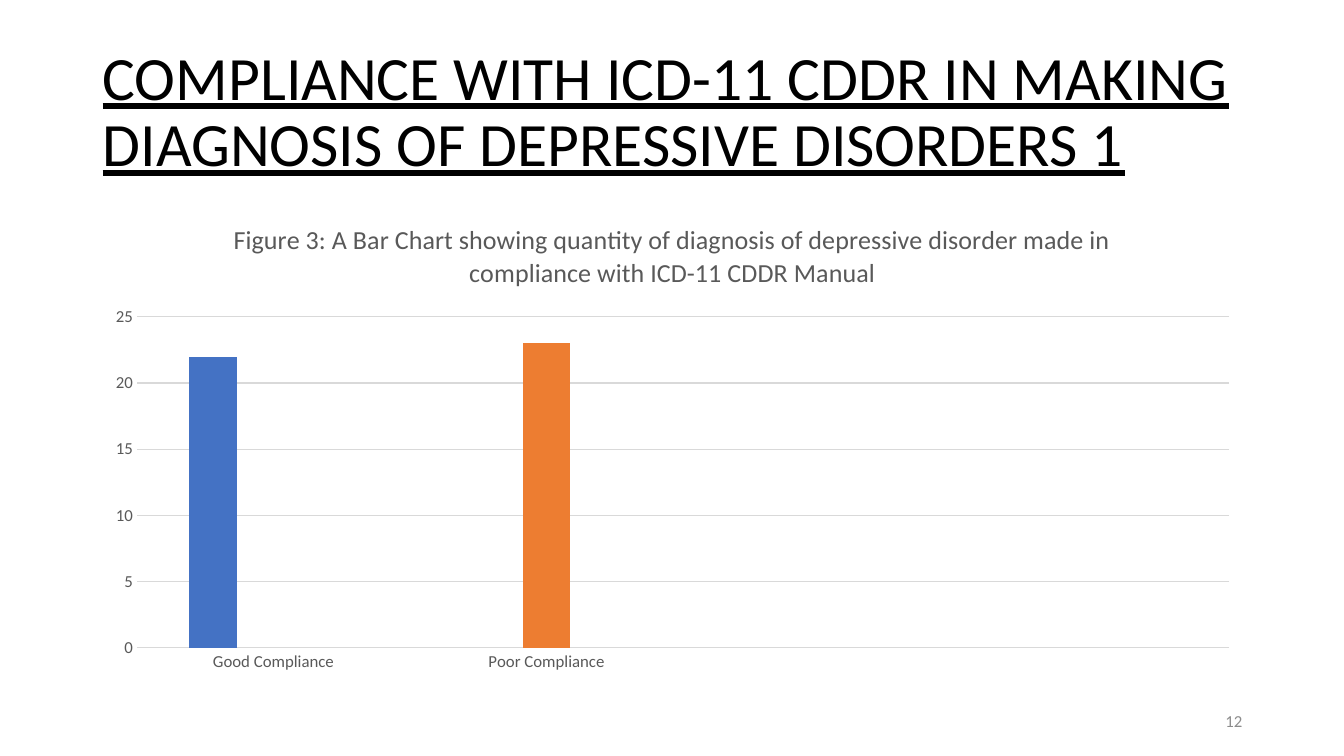
import pptx
import pptx.chart.data
import pptx.dml.color
import pptx.enum.chart
import pptx.enum.text
import pptx.util
from pptx.util import Inches


def rgb(hex_code):
    """Turn a hex string into a colour."""
    return pptx.dml.color.RGBColor.from_string(hex_code)


class ComplianceSlide:
    """Holds the style and the current slide."""

    font = "Calibri"
    ink = "000000"
    label_grey = "595959"
    number_grey = "8C8C8C"
    grid_grey = "D9D9D9"

    def __init__(self, deck):
        """Add a blank slide to the deck."""
        self.slide = deck.slides.add_slide(deck.slide_layouts[6])

    def style(self, font, size, color):
        """Apply the typeface, size and colour to a font."""
        font.name = self.font
        font.size = pptx.util.Pt(size)
        font.bold = False
        font.color.rgb = rgb(color)

    def text(self, words, box, size, color, align, spacing=1.0, underline=False):
        """Add a vertically centred line of text in a box."""
        frame = self.slide.shapes.add_textbox(*map(Inches, box)).text_frame
        frame.word_wrap = True
        frame.vertical_anchor = pptx.enum.text.MSO_ANCHOR.MIDDLE
        frame.text = words
        paragraph = frame.paragraphs[0]
        paragraph.alignment = align
        paragraph.line_spacing = spacing
        run = paragraph.runs[0]
        self.style(run.font, size, color)
        run.font.underline = underline

    def hairline(self, line):
        """Draw a line in the thin grid style."""
        line.color.rgb = rgb(self.grid_grey)
        line.width = pptx.util.Pt(0.75)

    def column_chart(self, caption, categories, series, box):
        """Add a clustered column chart with a caption."""
        data = pptx.chart.data.CategoryChartData()
        data.categories = categories
        for name, values, _ in series:
            data.add_series(name, values)
        chart = self.slide.shapes.add_chart(
            pptx.enum.chart.XL_CHART_TYPE.COLUMN_CLUSTERED, *map(Inches, box), data
        ).chart
        self.style(chart.font, 10, self.ink)
        chart.has_legend = False

        chart.has_title = True
        chart.chart_title.include_in_layout = False
        heading = chart.chart_title.text_frame
        heading.text = caption
        self.style(heading.paragraphs[0].runs[0].font, 18.6, self.label_grey)

        plot = chart.plots[0]
        plot.gap_width = 219
        plot.overlap = -27
        plot.vary_by_categories = False
        for bars, (_, _, color) in zip(plot.series, series):
            bars.format.fill.solid()
            bars.format.fill.fore_color.rgb = rgb(color)
            bars.invert_if_negative = False

        for axis in (chart.category_axis, chart.value_axis):
            axis.major_tick_mark = pptx.enum.chart.XL_TICK_MARK.NONE
            axis.minor_tick_mark = pptx.enum.chart.XL_TICK_MARK.NONE
            self.style(axis.tick_labels.font, 12, self.label_grey)
        self.hairline(chart.category_axis.format.line)
        chart.value_axis.format.line.fill.background()
        chart.value_axis.minimum_scale = 0
        chart.value_axis.has_major_gridlines = True
        self.hairline(chart.value_axis.major_gridlines.format.line)


def main():
    """Build the slide and save it."""
    deck = pptx.Presentation()
    deck.slide_width = Inches(13.33)
    deck.slide_height = Inches(7.5)
    page = ComplianceSlide(deck)
    align = pptx.enum.text.PP_ALIGN

    page.text(
        "COMPLIANCE WITH ICD-11 CDDR IN MAKING DIAGNOSIS OF DEPRESSIVE DISORDERS 1",
        (0.92, 0.4, 11.5, 1.45), 44, page.ink, align.LEFT, spacing=0.9, underline=True,
    )
    page.text("12", (9.42, 6.95, 3, 0.4), 12, page.number_grey, align.RIGHT)
    page.column_chart(
        "Figure 3: A Bar Chart showing quantity of diagnosis of depressive disorder "
        "made in compliance with ICD-11 CDDR Manual",
        ["Good Compliance", "Poor Compliance", "", ""],
        [
            ("Series 1", (22, None, None, None), "4472C4"),
            ("Series 2", (None, 23, None, None), "ED7D31"),
            ("Series 3", (None, None, None, None), "A5A5A5"),
        ],
        (0.92, 2, 11.5, 4.76),
    )
    deck.save("out.pptx")


if __name__ == "__main__":
    main()
